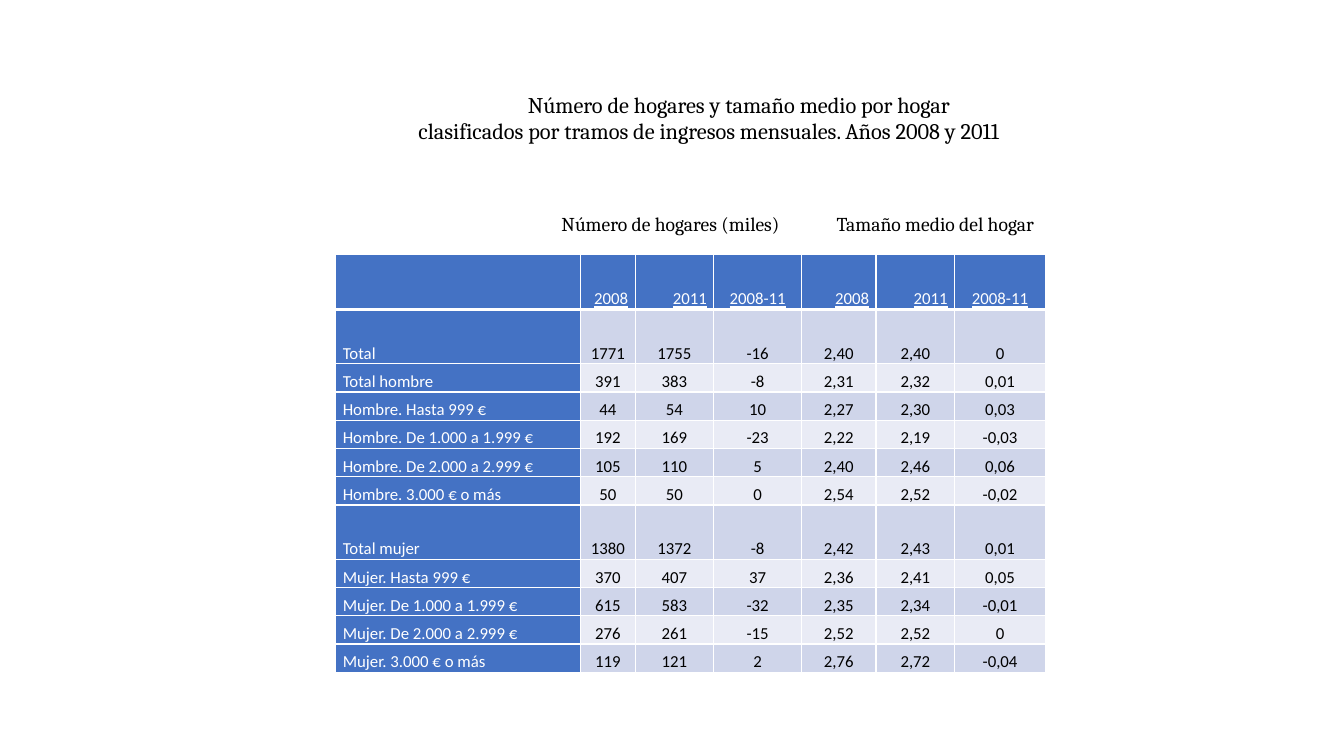
import dataclasses

import pptx
import pptx.dml.color
import pptx.enum.text
import pptx.oxml.ns
import pptx.util
from lxml import etree

ALIGN = pptx.enum.text.PP_ALIGN
ANCHOR = pptx.enum.text.MSO_ANCHOR
Inches = pptx.util.Inches
Pt = pptx.util.Pt
rgb = pptx.dml.color.RGBColor.from_string
qn = pptx.oxml.ns.qn


@dataclasses.dataclass(frozen=True)
class Theme:
    heading: str = "Cambria"
    body: str = "Calibri"
    ink: str = "000000"
    paper: str = "FFFFFF"
    accent: str = "4472C4"
    bands: tuple = ("CFD5EA", "E9EBF5")
    title_size: int = 16
    group_size: int = 14
    cell_size: int = 12
    rule: int = 1
    head_rule: int = 3


THEME = Theme()

# Table grid, in inches
LEFT, TOP = 3.33, 2.52
COLS = (2.43, 0.54, 0.78, 0.87, 0.74, 0.78, 0.9)
TALL, ROW = 0.54, 0.28
SECTIONS = ("Total", "Total mujer")

TITLE = (
    ("Número de hogares y tamaño medio por hogar", ALIGN.CENTER),
    ("clasificados por tramos de ingresos mensuales. Años 2008 y 2011", ALIGN.LEFT),
)
GROUPS = (("Número de hogares (miles)", 2.27), ("Tamaño medio del hogar", 5.0))
YEARS = ("2008", "2011", "2008-11")
HOUSEHOLDS = (
    ("Total", "1771", "1755", "-16", "2,40", "2,40", "0"),
    ("Total hombre", "391", "383", "-8", "2,31", "2,32", "0,01"),
    ("Hombre. Hasta 999 €", "44", "54", "10", "2,27", "2,30", "0,03"),
    ("Hombre. De 1.000 a 1.999 €", "192", "169", "-23", "2,22", "2,19", "-0,03"),
    ("Hombre. De 2.000 a 2.999 €", "105", "110", "5", "2,40", "2,46", "0,06"),
    ("Hombre. 3.000 € o más", "50", "50", "0", "2,54", "2,52", "-0,02"),
    ("Total mujer", "1380", "1372", "-8", "2,42", "2,43", "0,01"),
    ("Mujer. Hasta 999 €", "370", "407", "37", "2,36", "2,41", "0,05"),
    ("Mujer. De 1.000 a 1.999 €", "615", "583", "-32", "2,35", "2,34", "-0,01"),
    ("Mujer. De 2.000 a 2.999 €", "276", "261", "-15", "2,52", "2,52", "0"),
    ("Mujer. 3.000 € o más", "119", "121", "2", "2,76", "2,72", "-0,04"),
)


def apply(target, values):
    for name, value in values.items():
        setattr(target, name, value)


def write(p, text, align, color, **font):
    p.alignment = align
    r = p.add_run()
    r.text = text
    apply(r.font, font)
    r.font.color.rgb = rgb(color)


def add_title(s):
    sp = s.shapes.title
    apply(sp, dict(left=Inches(4.05), top=Inches(0.85),
                   width=Inches(6.56), height=Inches(0.64)))
    tf = sp.text_frame
    apply(tf, dict(word_wrap=True, vertical_anchor=ANCHOR.TOP,
                   auto_size=pptx.enum.text.MSO_AUTO_SIZE.NONE))
    for i, (line, align) in enumerate(TITLE):
        p = tf.add_paragraph() if i else tf.paragraphs[0]
        apply(p, dict(space_before=Pt(0), line_spacing=1.0))
        write(p, line, align, THEME.ink,
              name=THEME.heading, size=Pt(THEME.title_size))


def add_group_headings(s):
    sp = s.shapes.add_textbox(Inches(3.2), Inches(1.84), Inches(8.28), Inches(0.54))
    tf = sp.text_frame
    apply(tf, dict(word_wrap=True, vertical_anchor=ANCHOR.BOTTOM))
    p = tf.paragraphs[0]
    write(p, "".join("\t" + text for text, _ in GROUPS), ALIGN.LEFT, THEME.ink,
          name=THEME.heading, size=Pt(THEME.group_size))
    # Tab stops place each heading over its columns
    tabs = etree.SubElement(p._p.get_or_add_pPr(), qn("a:tabLst"))
    for _, stop in GROUPS:
        etree.SubElement(tabs, qn("a:tab"), pos=str(Inches(stop)), algn="l")


def add_borders(cell, bottom):
    tc_pr = cell._tc.get_or_add_tcPr()
    for side, width in zip("LRTB", (THEME.rule,) * 3 + (bottom,)):
        ln = etree.SubElement(tc_pr, qn("a:ln" + side), w=str(Pt(width)))
        fill = etree.SubElement(ln, qn("a:solidFill"))
        etree.SubElement(fill, qn("a:srgbClr"), val=THEME.paper)


def format_cell(cell, text, row, col):
    head, label = row == 0, col == 0
    add_borders(cell, THEME.head_rule if head else THEME.rule)
    cell.fill.solid()
    fill = THEME.accent if head or label else THEME.bands[(row - 1) % 2]
    cell.fill.fore_color.rgb = rgb(fill)
    apply(cell, dict(vertical_anchor=ANCHOR.BOTTOM, margin_left=Inches(0.07),
                     margin_right=Inches(0.07), margin_top=0, margin_bottom=0))
    if not text:
        return
    if label:
        align = ALIGN.LEFT
    else:
        align = ALIGN.RIGHT if head and text != YEARS[-1] else ALIGN.CENTER
    write(cell.text_frame.paragraphs[0], text, align,
          THEME.paper if head or label else THEME.ink,
          name=THEME.body, size=Pt(THEME.cell_size), bold=False, underline=head)


def add_household_table(s):
    rows = (("",) + YEARS * 2,) + HOUSEHOLDS
    heights = [0.55] + [TALL if r[0] in SECTIONS else ROW for r in HOUSEHOLDS]
    table = s.shapes.add_table(len(rows), len(COLS), Inches(LEFT), Inches(TOP),
                               Inches(sum(COLS)), Inches(sum(heights))).table
    apply(table, dict(first_row=False, horz_banding=False))
    for column, width in zip(table.columns, COLS):
        column.width = Inches(width)
    for i, (values, height) in enumerate(zip(rows, heights)):
        table.rows[i].height = Inches(height)
        for j, text in enumerate(values):
            format_cell(table.cell(i, j), text, i, j)


def main():
    prs = pptx.Presentation()
    apply(prs, dict(slide_width=Inches(13.33), slide_height=Inches(7.5)))
    s = prs.slides.add_slide(prs.slide_layouts.get_by_name("Title Only"))
    add_household_table(s)
    add_group_headings(s)
    add_title(s)
    prs.save("out.pptx")


if __name__ == "__main__":
    main()
